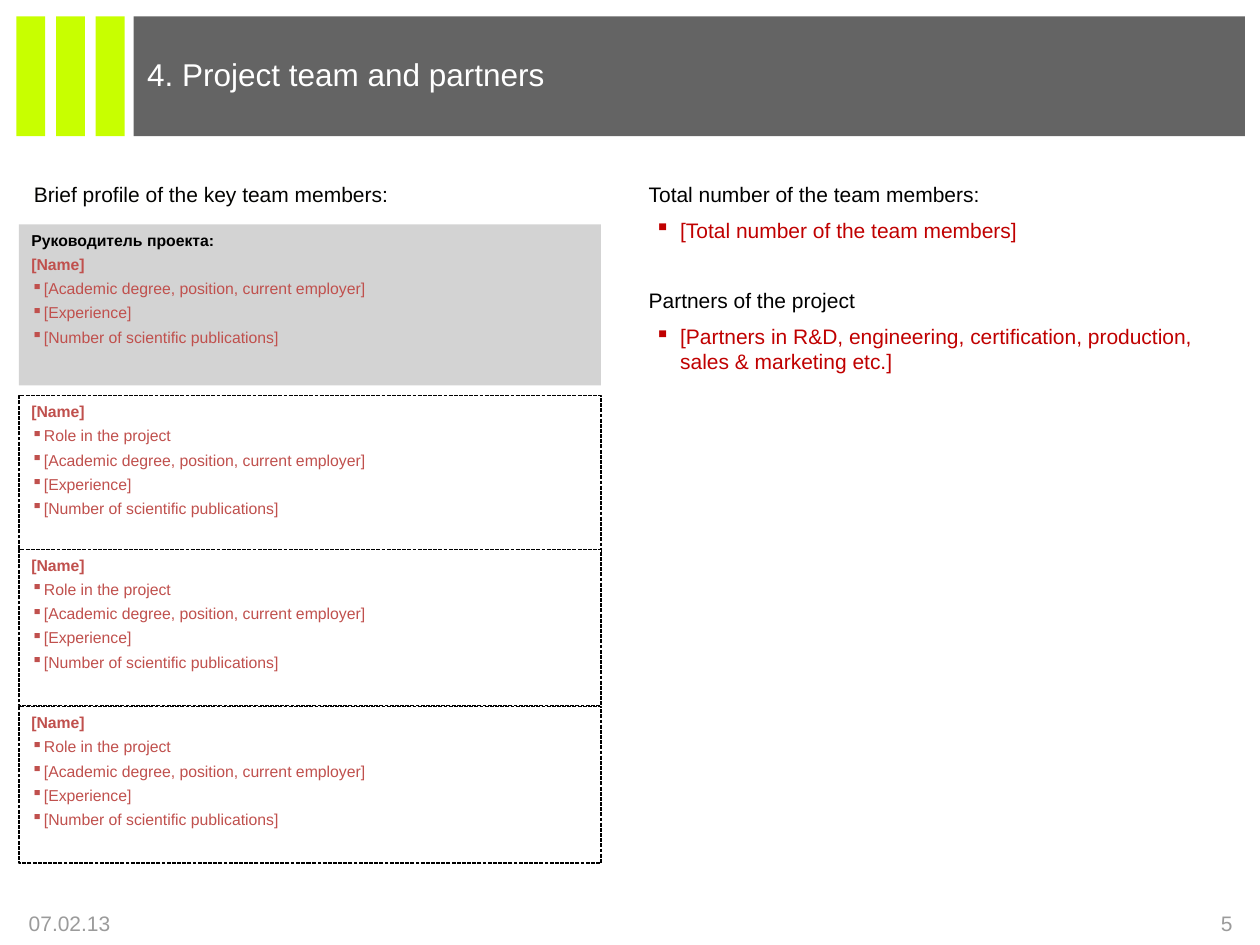
from dataclasses import dataclass

import pptx
import pptx.dml.color
import pptx.enum.dml
import pptx.enum.shapes
import pptx.enum.text
import pptx.oxml.ns
import pptx.util
from lxml import etree

ALIGN = pptx.enum.text.PP_ALIGN
ANCHOR = pptx.enum.text.MSO_ANCHOR


@dataclass(frozen=True)
class Theme:
    font: str = "Arial"
    band: str = "646464"
    accent: str = "C8FF00"
    paper: str = "FFFFFF"
    ink: str = "000000"
    heading: str = "030301"
    muted: str = "9B9B9B"
    leader: str = "D3D3D3"
    member: str = "C0504D"
    placeholder: str = "C00000"
    title_size: int = 18
    body_size: int = 12
    card_size: int = 9


@dataclass(frozen=True)
class Para:
    text: str
    color: str
    size: int
    bold: bool = False
    before: int = 0
    indent: float = 0
    hang: float = 0
    level: int = 0
    align: ALIGN = ALIGN.LEFT


def rgb(value):
    return pptx.dml.color.RGBColor.from_string(value)


def assign(target, values):
    for name, value in values.items():
        setattr(target, name, value)


class SlideBuilder:
    """Places elements on a grid of 100 columns by 75 rows."""

    COLUMNS, ROWS = 100, 75

    def __init__(self, deck, theme):
        self.theme = theme
        self.column = deck.slide_width / self.COLUMNS
        self.row = deck.slide_height / self.ROWS
        self.slide = deck.slides.add_slide(deck.slide_layouts[6])

    def place(self, left, top, width, height):
        return (round(left * self.column), round(top * self.row),
                round(width * self.column), round(height * self.row))

    def block(self, area, fill, paragraphs=(), dashed=False, **frame):
        shape = self.slide.shapes.add_shape(
            pptx.enum.shapes.MSO_SHAPE.RECTANGLE, *self.place(*area))
        shape.shadow.inherit = False
        shape.fill.solid()
        shape.fill.fore_color.rgb = rgb(fill)
        if dashed:
            shape.line.color.rgb = rgb(self.theme.ink)
            assign(shape.line, {"width": pptx.util.Pt(0.75),
                                "dash_style": pptx.enum.dml.MSO_LINE.SQUARE_DOT})
        else:
            shape.line.fill.background()
        self.fill_text(shape.text_frame, paragraphs, frame)

    def text(self, area, paragraphs, **frame):
        box = self.slide.shapes.add_textbox(*self.place(*area))
        self.fill_text(box.text_frame, paragraphs, frame)

    def fill_text(self, frame, paragraphs, frame_format):
        assign(frame, {"word_wrap": True, "vertical_anchor": ANCHOR.TOP, **frame_format})
        for index, para in enumerate(paragraphs):
            paragraph = frame.add_paragraph() if index else frame.paragraphs[0]
            self.set_indent(paragraph, para)
            assign(paragraph, {"alignment": para.align, "level": para.level})
            if index:
                paragraph.space_before = pptx.util.Pt(para.before)
            run = paragraph.add_run()
            run.text = para.text
            assign(run.font, {"name": self.theme.font, "bold": para.bold,
                              "size": pptx.util.Pt(para.size)})
            run.font.color.rgb = rgb(para.color)

    def set_indent(self, paragraph, para):
        """Sets the left margin and, for a hanging paragraph, a square bullet."""
        properties = paragraph._p.get_or_add_pPr()
        properties.set("marL", str(pptx.util.Inches(para.indent)))
        properties.set("indent", str(-pptx.util.Inches(para.hang)))
        if para.hang:
            bullet = etree.SubElement(properties, pptx.oxml.ns.qn("a:buChar"))
            bullet.set("char", "▪")


def card_paragraphs(theme, heads, items):
    style = {"size": theme.card_size, "before": 3, "level": 1}
    return ([Para(text, color, bold=True, **style) for text, color in heads]
            + [Para(text, theme.member, indent=0.1, hang=0.1, **style) for text in items])


def main():
    theme = Theme()
    deck = pptx.Presentation()
    assign(deck, {"slide_width": pptx.util.Inches(10),
                  "slide_height": pptx.util.Inches(7.5)})
    page = SlideBuilder(deck, theme)

    # Header
    page.block((10.6, 1.3, 88.2, 9.5), theme.band)
    for stripe in range(3):
        page.block((1.3 + 3.15 * stripe, 1.3, 2.3, 9.5), theme.accent)
    page.text((10.7, 4.4, 88.2, 6.3),
              [Para("4. Project team and partners", theme.paper, theme.title_size)],
              margin_top=0, margin_bottom=0)

    # Footer
    for left, width, label, align in ((1.3, 23.3, "07.02.13", ALIGN.LEFT),
                                      (75.2, 23.6, "5", ALIGN.RIGHT)):
        page.text((left, 71.6, width, 3.4),
                  [Para(label, theme.muted, theme.body_size, align=align)],
                  vertical_anchor=ANCHOR.MIDDLE)

    # Team members
    page.text((1.7, 13.9, 48.4, 3),
              [Para("Brief profile of the key team members:", theme.heading, theme.body_size)])
    name = ("[Name]", theme.member)
    profile = ["[Academic degree, position, current employer]", "[Experience]",
               "[Number of scientific publications]"]
    page.block((1.5, 17.8, 46.2, 12.8), theme.leader,
               card_paragraphs(theme, [("Руководитель проекта:", theme.ink), name], profile),
               margin_right=0)
    member = card_paragraphs(theme, [name], ["Role in the project"] + profile)
    for top in (31.4, 56.1, 43.6):
        page.block((1.5, top, 46.2, 12.4), theme.paper, member, dashed=True)

    # Team size and partners
    partners = []
    for heading, answer, gap in (
            ("Total number of the team members:", "[Total number of the team members]", 0),
            ("Partners of the project",
             "[Partners in R&D, engineering, certification, production, sales & marketing etc.]",
             26)):
        partners += [
            Para(heading, theme.ink, theme.body_size, before=gap),
            Para(answer, theme.placeholder, theme.body_size, before=6,
                 indent=0.25, hang=0.2, level=1)]
    page.text((50.5, 13.9, 47.3, 48), partners)

    deck.save("out.pptx")


if __name__ == "__main__":
    main()
